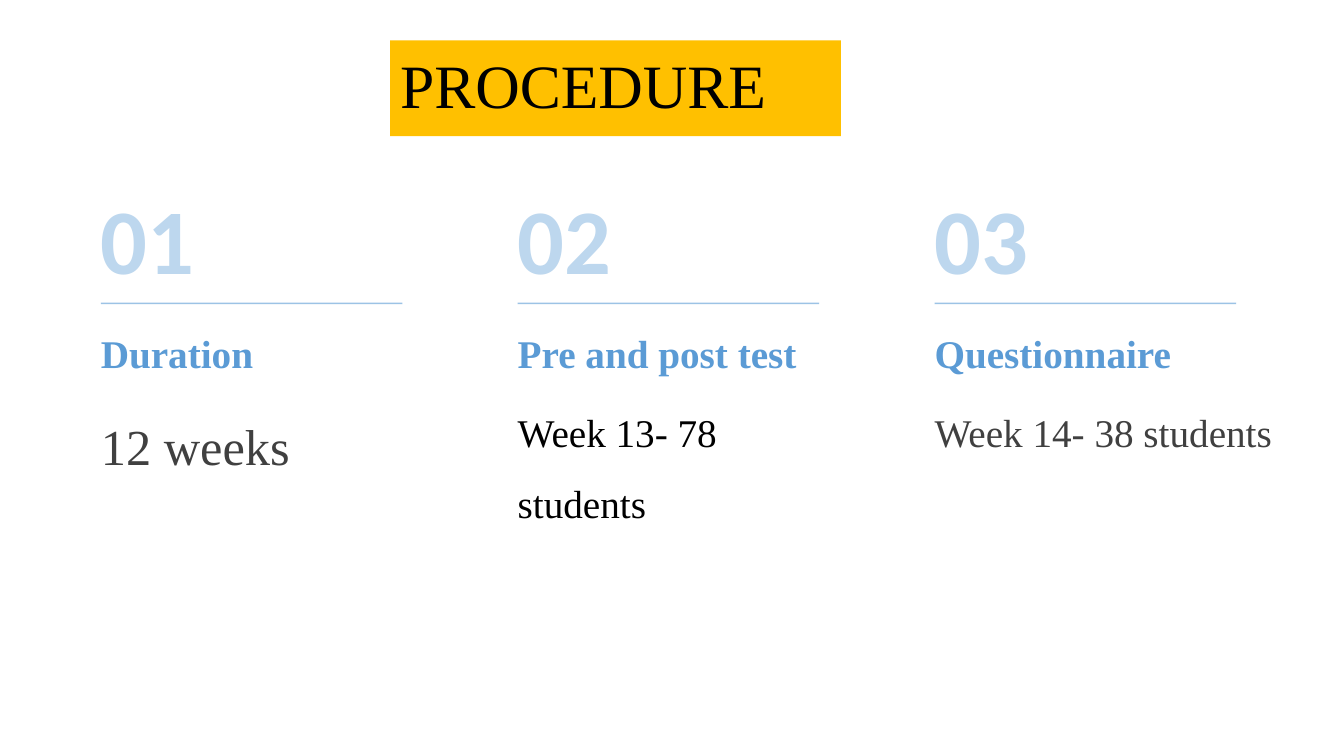
from dataclasses import dataclass
from typing import NamedTuple

from lxml.etree import SubElement
from pptx import Presentation
from pptx.dml.color import RGBColor
from pptx.enum.shapes import MSO_CONNECTOR
from pptx.enum.text import MSO_ANCHOR, PP_ALIGN
from pptx.oxml.ns import qn
from pptx.util import Inches, Pt


@dataclass(frozen=True)
class Theme:
    serif: str = "Times New Roman"
    sans: str = "Calibri"
    banner: str = "FFC000"
    black: str = "000000"
    grey: str = "404040"
    accent: str = "5B9BD5"
    pale: str = "BDD7EE"
    title_size: int = 44
    number_size: int = 66
    large_size: int = 36
    text_size: int = 28
    rule_width: int = 1
    rule_opacity: int = 60


class Box(NamedTuple):
    left: float
    top: float
    width: float
    height: float

    def inches(self):
        return [Inches(length) for length in self]


class Step(NamedTuple):
    heading: str
    detail: str
    size: int
    color: str
    detail_width: float


THEME = Theme()
SLIDE_WIDTH, SLIDE_HEIGHT = 13.33, 7.5
TITLE = Box(3.87, 0.4, 4.47, 0.95)
STEPS_AREA = Box(1, 1.6, 11.33, 4.3)
COLUMN_WIDTH = 3.06
RULE_LENGTH = 2.99
STEPS = [
    Step("Duration", "12 weeks", THEME.large_size, THEME.grey, 2.35),
    Step("Pre and post test", "Week 13- 78 students", THEME.text_size, THEME.black, COLUMN_WIDTH),
    Step("Questionnaire", "Week 14- 38 students", THEME.text_size, THEME.grey, 3.46),
]


def set_attributes(target, values):
    for name, value in values.items():
        setattr(target, name, value)


def add_text(slide, box, text, font, color, anchor, spacing=1.0, inset=0):
    shape = slide.shapes.add_textbox(*box.inches())
    frame = shape.text_frame
    set_attributes(frame, {"word_wrap": True, "vertical_anchor": anchor})
    if not inset:
        margins = ("margin_left", "margin_right", "margin_top", "margin_bottom")
        set_attributes(frame, dict.fromkeys(margins, 0))
    paragraph = frame.paragraphs[0]
    set_attributes(paragraph, {"alignment": PP_ALIGN.LEFT, "line_spacing": spacing})
    run = paragraph.add_run()
    run.text = text
    set_attributes(run.font, font)
    run.font.color.rgb = RGBColor.from_string(color)
    return shape


def add_rule(slide, left, top):
    ends = [Inches(length) for length in (left, top, left + RULE_LENGTH, top)]
    rule = slide.shapes.add_connector(MSO_CONNECTOR.STRAIGHT, *ends)
    rule.line.width = Pt(THEME.rule_width)
    rule.line.color.rgb = RGBColor.from_string(THEME.accent)
    properties = rule.element.spPr
    color = properties.find(".//" + qn("a:srgbClr"))
    SubElement(color, qn("a:alpha"), val=str(THEME.rule_opacity * 1000))
    SubElement(properties, qn("a:effectLst"))


def add_title(slide, box):
    font = {"name": THEME.serif, "size": Pt(THEME.title_size)}
    shape = add_text(slide, box, "PROCEDURE", font, THEME.black,
                     MSO_ANCHOR.MIDDLE, spacing=0.9, inset=True)
    shape.fill.solid()
    shape.fill.fore_color.rgb = RGBColor.from_string(THEME.banner)


def add_step(slide, box, number, step):
    number_font = {"name": THEME.sans, "size": Pt(THEME.number_size), "bold": True}
    heading_font = {"name": THEME.serif, "size": Pt(THEME.text_size), "bold": True}
    detail_font = {"name": THEME.serif, "size": Pt(step.size)}
    add_text(slide, box._replace(height=1.31), f"{number:02}",
             number_font, THEME.pale, MSO_ANCHOR.BOTTOM)
    add_rule(slide, box.left, box.top + 1.41)
    add_text(slide, box._replace(top=box.top + 1.64, height=0.49), step.heading,
             heading_font, THEME.accent, MSO_ANCHOR.BOTTOM)
    detail_box = Box(box.left, box.top + 2.22, step.detail_width, box.height - 2.22)
    add_text(slide, detail_box, step.detail, detail_font, step.color,
             MSO_ANCHOR.TOP, spacing=1.5)


def add_steps(slide, box):
    pitch = (box.width - COLUMN_WIDTH) / (len(STEPS) - 1)
    for index, step in enumerate(STEPS):
        column = Box(box.left + index * pitch, box.top, COLUMN_WIDTH, box.height)
        add_step(slide, column, index + 1, step)


def main():
    presentation = Presentation()
    set_attributes(presentation, {"slide_width": Inches(SLIDE_WIDTH),
                                  "slide_height": Inches(SLIDE_HEIGHT)})
    slide = presentation.slides.add_slide(presentation.slide_layouts[6])
    add_title(slide, TITLE)
    add_steps(slide, STEPS_AREA)
    presentation.save("out.pptx")


if __name__ == "__main__":
    main()
